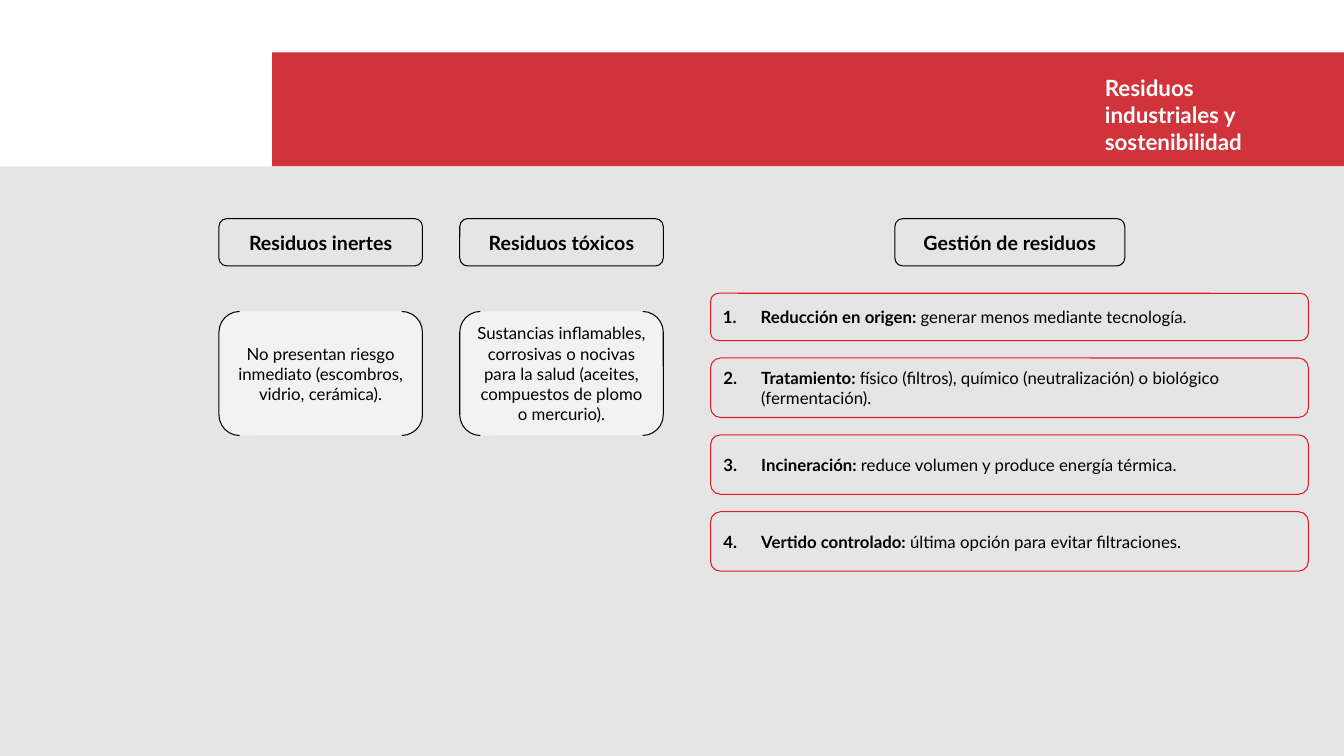
import pptx
import pptx.util
import pptx.dml.color
import pptx.enum.shapes
import pptx.enum.text
import pptx.oxml.ns
import lxml.etree

Pt = pptx.util.Pt
RGB = pptx.dml.color.RGBColor
Kind = pptx.enum.shapes.MSO_SHAPE
Align = pptx.enum.text.PP_ALIGN
Anchor = pptx.enum.text.MSO_ANCHOR
qn = pptx.oxml.ns.qn

BLACK = RGB(0x00, 0x00, 0x00)
WHITE = RGB(0xFF, 0xFF, 0xFF)
GREY = RGB(0xE5, 0xE5, 0xE5)
BRAND = RGB(0xD0, 0x33, 0x3A)
RED = RGB(0xE2, 0x1A, 0x23)


class Board:
    """Draws styled elements on one slide, with all lengths in points."""

    font = "Lato"

    def __init__(self, slide):
        self.slide = slide

    def words(self, para, text, size, bold=False, color=BLACK):
        run = para.add_run()
        run.text = text
        run.font.name = self.font
        run.font.size = Pt(size)
        run.font.bold = bold
        run.font.color.rgb = color

    def shape(self, kind, box, fill=None, line=None):
        item = self.slide.shapes.add_shape(kind, *map(Pt, box))
        item.shadow.inherit = False
        if fill is None:
            item.fill.background()
        else:
            item.fill.solid()
            item.fill.fore_color.rgb = fill
        if line is None:
            item.line.fill.background()
        else:
            item.line.color.rgb = line
            item.line.width = Pt(0.75)
        item.text_frame.word_wrap = True
        item.text_frame.vertical_anchor = Anchor.MIDDLE
        return item

    def title(self, box, text):
        item = self.slide.shapes.title
        item.left, item.top, item.width, item.height = map(Pt, box)
        frame = item.text_frame
        frame.word_wrap = True
        frame.auto_size = pptx.enum.text.MSO_AUTO_SIZE.NONE
        frame.vertical_anchor = Anchor.TOP
        para = frame.paragraphs[0]
        para.alignment = Align.LEFT
        para.space_after = Pt(12)
        self.words(para, text, 16, True, WHITE)
        tree = self.slide.shapes.element
        tree.append(item.element)

    def head(self, left, width, text):
        item = self.shape(Kind.ROUNDED_RECTANGLE, (left, 156.2, width, 33.8), line=BLACK)
        para = item.text_frame.paragraphs[0]
        para.alignment = Align.CENTER
        self.words(para, text, 14, True)

    def note(self, left, width, text):
        item = self.shape(Kind.DOUBLE_BRACKET, (left, 222.5, width, 88.6), WHITE, BLACK)
        tint = item.element.spPr.find(qn("a:solidFill"))[0]
        lxml.etree.SubElement(tint, qn("a:alpha"), val="50000")
        para = item.text_frame.paragraphs[0]
        para.alignment = Align.CENTER
        self.words(para, text, 12)

    def step(self, num, top, height, label, text):
        item = self.shape(Kind.ROUNDED_RECTANGLE, (507.6, top, 427, height), line=RED)
        para = item.text_frame.paragraphs[0]
        para.alignment = Align.LEFT
        props = para._p.get_or_add_pPr()
        props.set("marL", str(Pt(27)))
        props.set("indent", str(-Pt(27)))
        lxml.etree.SubElement(
            props, qn("a:buAutoNum"), type="arabicPeriod", startAt=str(num))
        self.words(para, label, 12, True)
        self.words(para, text, 12)


def main():
    deck = pptx.Presentation()
    deck.slide_width, deck.slide_height = Pt(960), Pt(540)
    board = Board(deck.slides.add_slide(deck.slide_layouts[5]))

    board.shape(Kind.RECTANGLE, (0, 118.8, 960, 421.2), GREY)
    board.shape(Kind.RECTANGLE, (194.4, 37.4, 765.6, 81.4), BRAND)
    board.title((782, 49.7, 136, 65.5), "Residuos industriales y sostenibilidad")

    wastes = [
        ("Residuos inertes",
         "No presentan riesgo inmediato (escombros, vidrio, cerámica)."),
        ("Residuos tóxicos",
         "Sustancias inflamables, corrosivas o nocivas para la salud "
         "(aceites, compuestos de plomo o mercurio)."),
    ]
    for col, (name, text) in enumerate(wastes):
        left = 156.4 + col * 172
        board.head(left, 145.4, name)
        board.note(left, 145.4, text)

    board.head(639.2, 164.2, "Gestión de residuos")
    steps = [
        ("Reducción en origen: ", "generar menos mediante tecnología."),
        ("Tratamiento: ",
         "físico (filtros), químico (neutralización) o biológico (fermentación)."),
        ("Incineración: ", "reduce volumen y produce energía térmica."),
        ("Vertido controlado: ", "última opción para evitar filtraciones."),
    ]
    top = 209.5
    for num, (label, text) in enumerate(steps, 1):
        height = 33.8 if num == 1 else 42.5
        board.step(num, top, height, label, text)
        top += height + 12.4

    deck.save("out.pptx")


if __name__ == "__main__":
    main()
